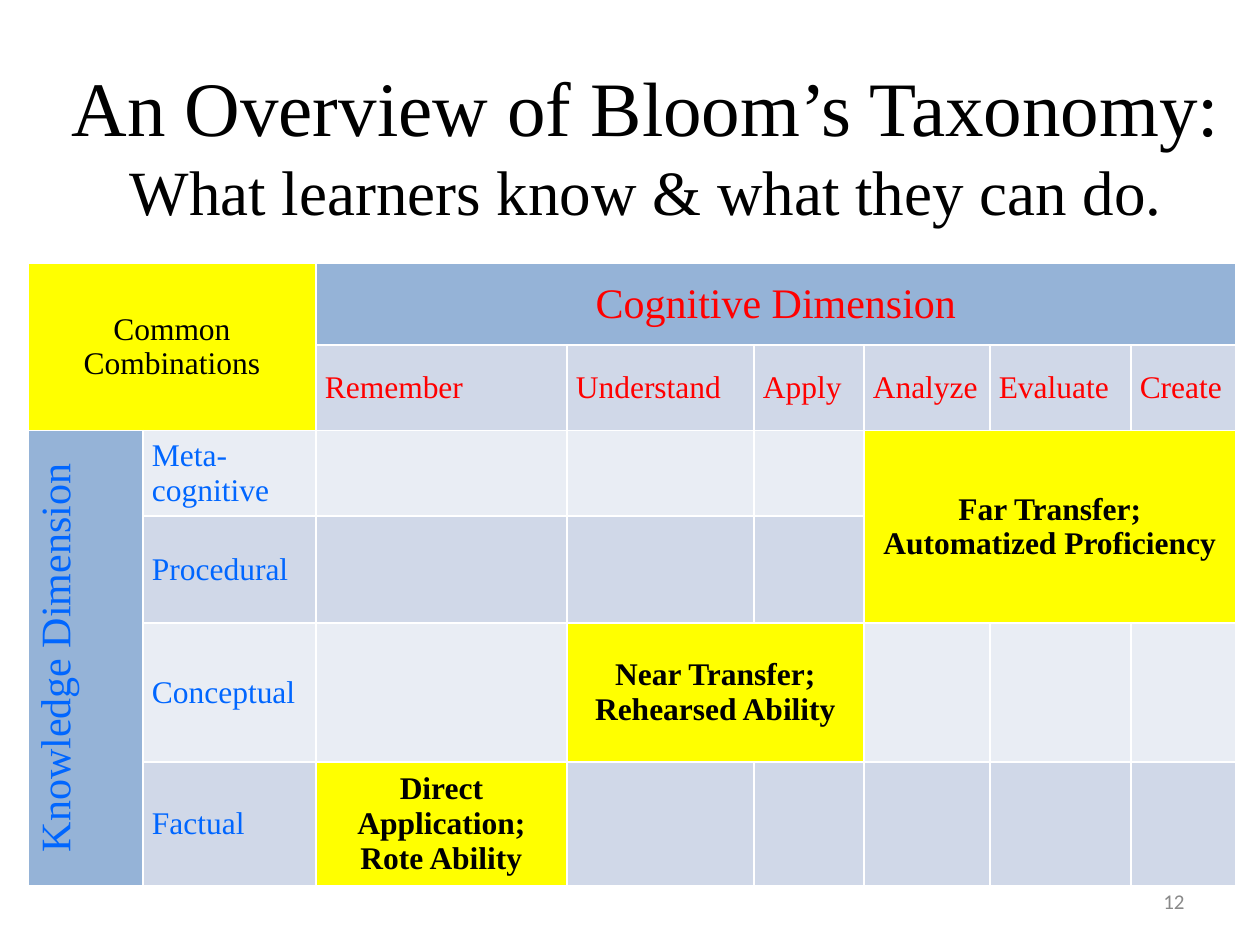
import lxml.etree
import pptx
import pptx.dml.color
import pptx.enum.text
import pptx.oxml.ns
import pptx.util

PX = 914400 // 126
SERIF = "Times New Roman"
BLACK, RED, BLUE = "000000", "FF0000", "0066FF"
YELLOW, HEADER_BLUE = "FFFF00", "95B3D7"
BANDS = ("E9EDF4", "D0D8E8")
LEFT = pptx.enum.text.PP_ALIGN.LEFT
CENTER = pptx.enum.text.PP_ALIGN.CENTER
RIGHT = pptx.enum.text.PP_ALIGN.RIGHT
MIDDLE = pptx.enum.text.MSO_ANCHOR.MIDDLE


def style(paragraph, size, color, align=LEFT, bold=False, font=SERIF):
    paragraph.alignment = align
    for run in paragraph.runs:
        run.font.name = font
        run.font.size = pptx.util.Pt(size)
        run.font.bold = bold
        run.font.color.rgb = pptx.dml.color.RGBColor.from_string(color)


def add_white_borders(cell):
    properties = cell._tc.get_or_add_tcPr()
    for position, side in enumerate(("lnL", "lnR", "lnT", "lnB")):
        line = lxml.etree.Element(pptx.oxml.ns.qn(f"a:{side}"), w="12700")
        fill = lxml.etree.SubElement(line, pptx.oxml.ns.qn("a:solidFill"))
        lxml.etree.SubElement(fill, pptx.oxml.ns.qn("a:srgbClr"), val="FFFFFF")
        properties.insert(position, line)


presentation = pptx.Presentation()
presentation.slide_width = pptx.util.Inches(10)
presentation.slide_height = pptx.util.Inches(7.5)
slide = presentation.slides.add_slide(presentation.slide_layouts[6])

# Title
title = slide.shapes.add_textbox(42 * PX, 42 * PX, 1208 * PX, 204 * PX).text_frame
title.word_wrap = True
title.vertical_anchor = MIDDLE
heading = title.paragraphs[0]
heading.text = "An Overview of Bloom’s Taxonomy:\vWhat learners know & what they can do."
style(heading, 44, BLACK, CENTER)
heading.runs[1].font.size = pptx.util.Pt(36)

# Taxonomy grid
column_widths = (115, 173, 251, 187, 110, 126, 141, 105)
row_heights = (82, 82, 82, 107, 139, 114)
taxonomy = slide.shapes.add_table(
    len(row_heights), len(column_widths), 28 * PX, 263 * PX,
    sum(column_widths) * PX, sum(row_heights) * PX).table
taxonomy.first_row = False
taxonomy.horz_banding = False
for column, width in zip(taxonomy.columns, column_widths):
    column.width = width * PX
for row, height in zip(taxonomy.rows, row_heights):
    row.height = height * PX

for row_index, row in enumerate(taxonomy.rows):
    for cell in row.cells:
        cell.margin_left = cell.margin_right = 9 * PX
        cell.margin_top = cell.margin_bottom = 5 * PX
        cell.vertical_anchor = MIDDLE
        cell.fill.solid()
        cell.fill.fore_color.rgb = pptx.dml.color.RGBColor.from_string(BANDS[row_index % 2])
        add_white_borders(cell)

processes = ("Remember", "Understand", "Apply", "Analyze", "Evaluate", "Create")
for column_index, process in enumerate(processes, start=2):
    cell = taxonomy.cell(1, column_index)
    cell.text = process
    style(cell.text_frame.paragraphs[0], 18, RED)

knowledge_types = ("Meta-cognitive", "Procedural", "Conceptual", "Factual")
for row_index, knowledge in enumerate(knowledge_types, start=2):
    cell = taxonomy.cell(row_index, 1)
    cell.text = knowledge
    style(cell.text_frame.paragraphs[0], 18, BLUE)

# first row, first column, last row, last column, text, fill, size, colour, bold
blocks = (
    (0, 0, 1, 1, "Common Combinations", YELLOW, 18, BLACK, False),
    (0, 2, 0, 7, "Cognitive Dimension", HEADER_BLUE, 24, RED, False),
    (2, 0, 5, 0, "Knowledge Dimension", HEADER_BLUE, 24, BLUE, False),
    (2, 5, 3, 7, "Far Transfer;\nAutomatized Proficiency", YELLOW, 18, BLACK, True),
    (4, 3, 4, 4, "Near Transfer;\nRehearsed Ability", YELLOW, 18, BLACK, True),
    (5, 2, 5, 2, "Direct Application;\nRote Ability", YELLOW, 18, BLACK, True),
)
for top, left, bottom, right, wording, fill, size, color, bold in blocks:
    block = taxonomy.cell(top, left)
    if (top, left) != (bottom, right):
        block.merge(taxonomy.cell(bottom, right))
    block.text = wording
    block.fill.fore_color.rgb = pptx.dml.color.RGBColor.from_string(fill)
    for paragraph in block.text_frame.paragraphs:
        style(paragraph, size, color, CENTER, bold)
taxonomy.cell(2, 0)._tc.get_or_add_tcPr().set("vert", "vert270")

# Slide number
page_number = slide.shapes.add_textbox(903 * PX, 876 * PX, 294 * PX, 50 * PX).text_frame
page_number.word_wrap = True
page_number.vertical_anchor = MIDDLE
page_number.text = "12"
style(page_number.paragraphs[0], 12, "898989", RIGHT, font="Calibri")

presentation.save("out.pptx")
